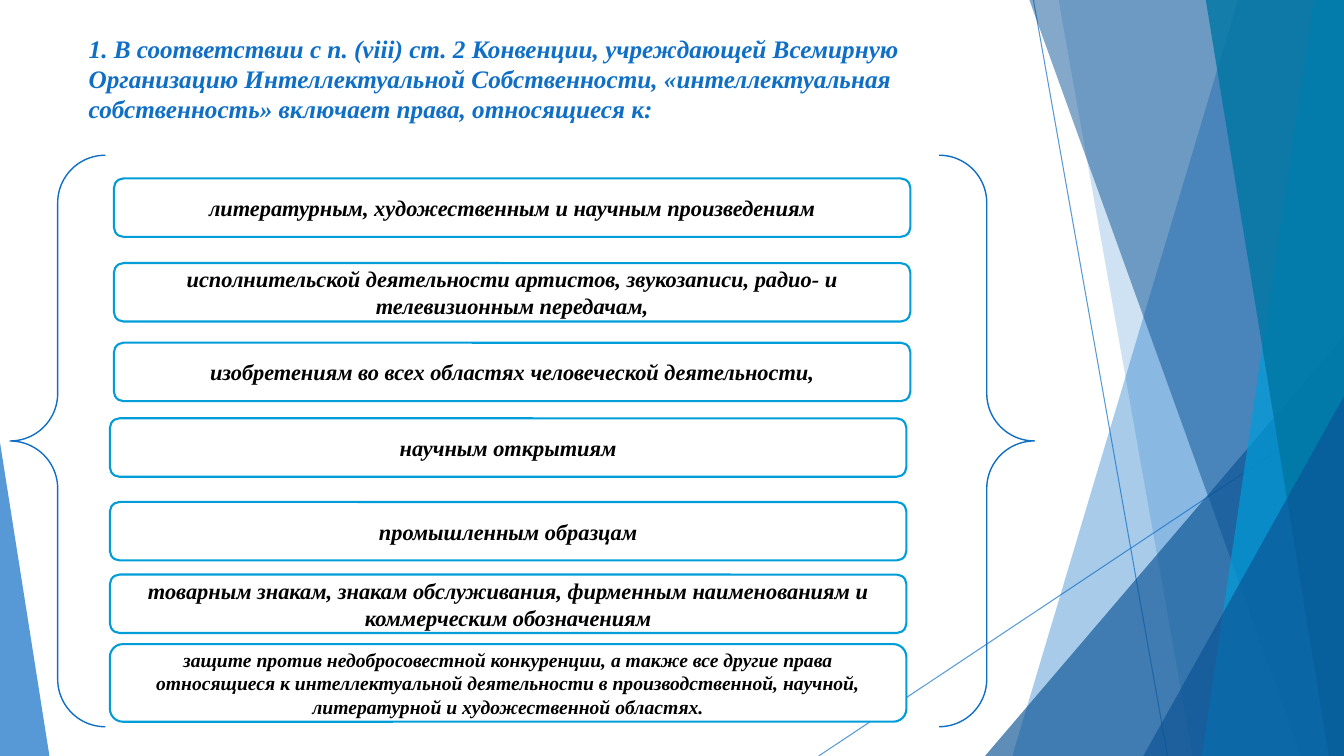
from lxml import etree
from pptx import Presentation
from pptx.dml.color import RGBColor
from pptx.enum.shapes import MSO_CONNECTOR, MSO_SHAPE
from pptx.enum.text import MSO_ANCHOR, MSO_AUTO_SIZE, PP_ALIGN
from pptx.oxml.ns import qn
from pptx.util import Inches, Pt

STRAIGHT = MSO_CONNECTOR.STRAIGHT
TRIANGLE = MSO_SHAPE.ISOSCELES_TRIANGLE
ROUNDED = MSO_SHAPE.ROUNDED_RECTANGLE
BRACES = MSO_SHAPE.DOUBLE_BRACE
TOP, MIDDLE = MSO_ANCHOR.TOP, MSO_ANCHOR.MIDDLE
LEFT, CENTER = PP_ALIGN.LEFT, PP_ALIGN.CENTER
NO_AUTOFIT = MSO_AUTO_SIZE.NONE

WIDTH, HEIGHT = 13.33, 7.5
TITLE_ONLY = 5
FONT = "Times New Roman"
COLORS = {
    "blue": "0F6FC6",
    "navy": "0B5394",
    "cyan": "009DD9",
    "teal": "0076A3",
    "white": "FFFFFF",
    "black": "000000",
}

TITLE = (
    "1. В соответствии с п. (viii) ст. 2 Конвенции, учреждающей Всемирную "
    "Организацию Интеллектуальной Собственности, «интеллектуальная "
    "собственность» включает права, относящиеся к:"
)

# left, top, height, text size, text
RIGHTS = [
    (1.13, 1.77, 0.58, 16, "литературным, художественным и научным произведениям"),
    (1.13, 2.61, 0.58, 16, "исполнительской деятельности артистов, звукозаписи, "
                           "радио- и телевизионным передачам,"),
    (1.13, 3.4, 0.58, 16, "изобретениям во всех областях человеческой деятельности,"),
    (1.09, 4.15, 0.58, 16, "научным открытиям"),
    (1.09, 4.98, 0.58, 16, "промышленным образцам"),
    (1.09, 5.7, 0.58, 16, "товарным знакам, знакам обслуживания, фирменным "
                          "наименованиям и коммерческим обозначениям"),
    (1.09, 6.39, 0.77, 14, "защите против недобросовестной конкуренции, а также все "
                           "другие права относящиеся к интеллектуальной деятельности "
                           "в производственной, научной, литературной и "
                           "художественной областях."),
]


class Page:
    def __init__(self, deck):
        self.slide = deck.slides.add_slide(deck.slide_layouts[TITLE_ONLY])
        self.shapes = self.slide.shapes

    def paint(self, target, color, opacity=100):
        """Give a fill format a solid colour with opacity in percent."""
        target.solid()
        target.fore_color.rgb = RGBColor.from_string(COLORS[color])
        if opacity < 100:
            choice = target._xPr.find(qn("a:solidFill")).find(qn("a:srgbClr"))
            etree.SubElement(choice, qn("a:alpha"), val=str(opacity * 1000))

    def set_text(self, shape, text, size, color, align, anchor):
        frame = shape.text_frame
        frame.word_wrap = True
        frame.auto_size = NO_AUTOFIT
        frame.vertical_anchor = anchor
        para = frame.paragraphs[0]
        para.alignment = align
        span = para.add_run()
        span.text = text
        font = span.font
        font.name, font.size = FONT, Pt(size)
        font.bold = font.italic = True
        font.color.rgb = RGBColor.from_string(COLORS[color])

    def title(self, text, left, top, width, height):
        box = self.shapes.title
        box.left, box.top = Inches(left), Inches(top)
        box.width, box.height = Inches(width), Inches(height)
        self.set_text(box, text, 18, "blue", LEFT, TOP)

    def line(self, x1, y1, x2, y2):
        line = self.shapes.add_connector(
            STRAIGHT, Inches(x1), Inches(y1), Inches(x2), Inches(y2))
        line.line.width = Pt(0.75)
        self.paint(line.line.fill, "blue", 70)
        etree.SubElement(line._element.spPr, qn("a:effectLst"))

    def band(self, top_left, top_right, bottom_right, bottom_left, color, opacity):
        """Draw a full-height band from the x positions of its four corners."""
        builder = self.shapes.build_freeform(Inches(top_left), 0)
        corners = [(top_right, 0), (bottom_right, HEIGHT), (bottom_left, HEIGHT)]
        builder.add_line_segments([(Inches(x), Inches(y)) for x, y in corners])
        band = builder.convert_to_shape()
        band.shadow.inherit = False
        band.line.fill.background()
        self.paint(band.fill, color, opacity)

    def preset(self, kind, left, top, width, height):
        shape = self.shapes.add_shape(
            kind, Inches(left), Inches(top), Inches(width), Inches(height))
        shape.shadow.inherit = False
        return shape

    def triangle(self, left, top, width, apex, color, opacity):
        """Draw a triangle standing on the slide's bottom edge."""
        triangle = self.preset(TRIANGLE, left, top, width, HEIGHT - top)
        triangle.adjustments[0] = apex
        triangle.line.fill.background()
        self.paint(triangle.fill, color, opacity)

    def right_box(self, left, top, height, size, text):
        box = self.preset(ROUNDED, left, top, 7.9, height)
        self.paint(box.fill, "white")
        self.paint(box.line.fill, "cyan")
        box.line.width = Pt(1.5)
        self.set_text(box, text, size, "black", CENTER, MIDDLE)

    def braces(self, left, top, width, height):
        braces = self.preset(BRACES, left, top, width, height)
        braces.fill.background()
        self.paint(braces.line.fill, "blue")
        braces.line.width = Pt(1)

    def backdrop(self):
        self.line(10.25, 0, 11.58, HEIGHT)
        self.line(WIDTH, 4.03, 8.12, HEIGHT)
        self.band(12.28, WIDTH, WIDTH, 10.04, "blue", 36)
        self.band(10.5, WIDTH, WIDTH, 11.83, "blue", 20)
        self.triangle(9.77, 3.33, 3.56, 1, "navy", 66)
        self.band(10.21, WIDTH, WIDTH, 12.91, "navy", 50)
        self.band(13.03, WIDTH, WIDTH, 11.92, "cyan", 70)
        self.band(11.96, WIDTH, WIDTH, 13.18, "teal", 80)
        self.triangle(11.34, 3.93, 1.99, 1, "navy", 66)
        self.triangle(0, 4.39, 0.49, 0, "blue", 70)


def main():
    deck = Presentation()
    deck.slide_width, deck.slide_height = Inches(WIDTH), Inches(HEIGHT)
    page = Page(deck)
    page.backdrop()
    page.title(TITLE, 0.78, 0.28, 9.4, 1.44)
    for right in RIGHTS:
        page.right_box(*right)
    page.braces(0.1, 1.54, 10.16, 5.67)
    deck.save("out.pptx")


if __name__ == "__main__":
    main()
